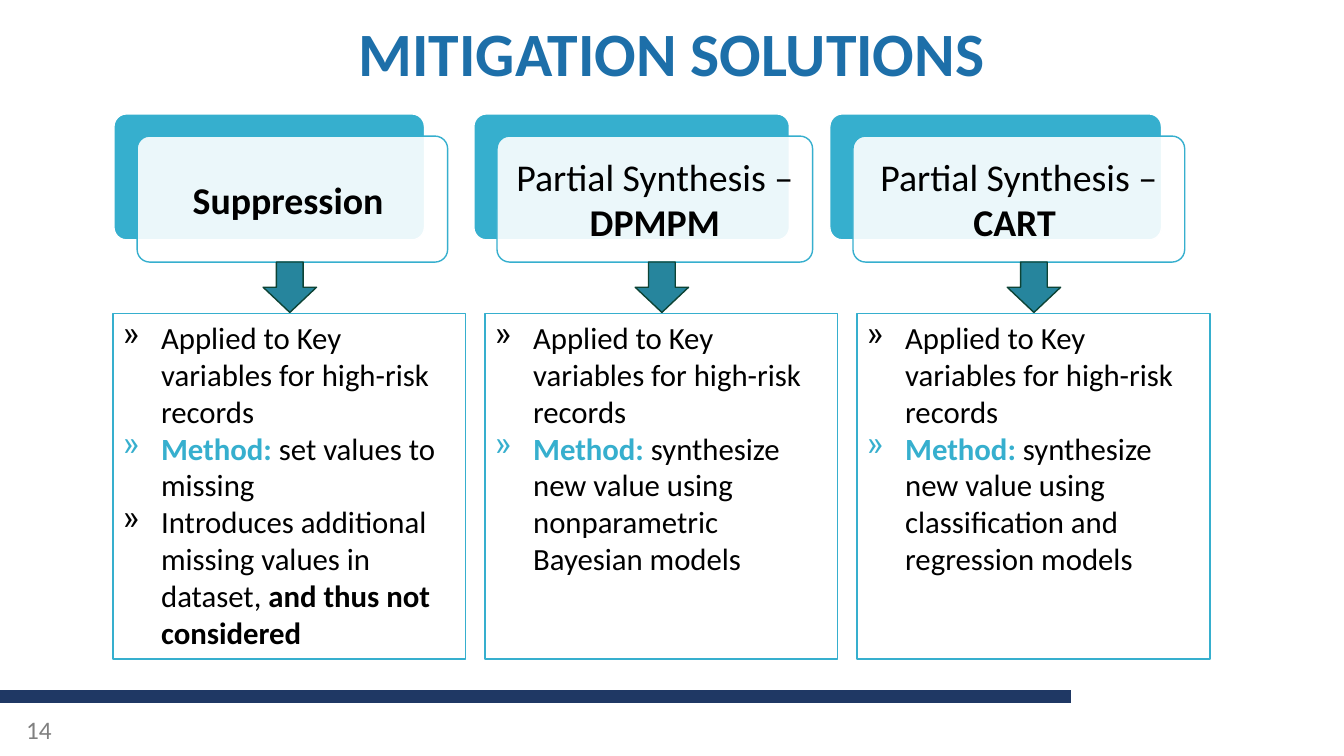
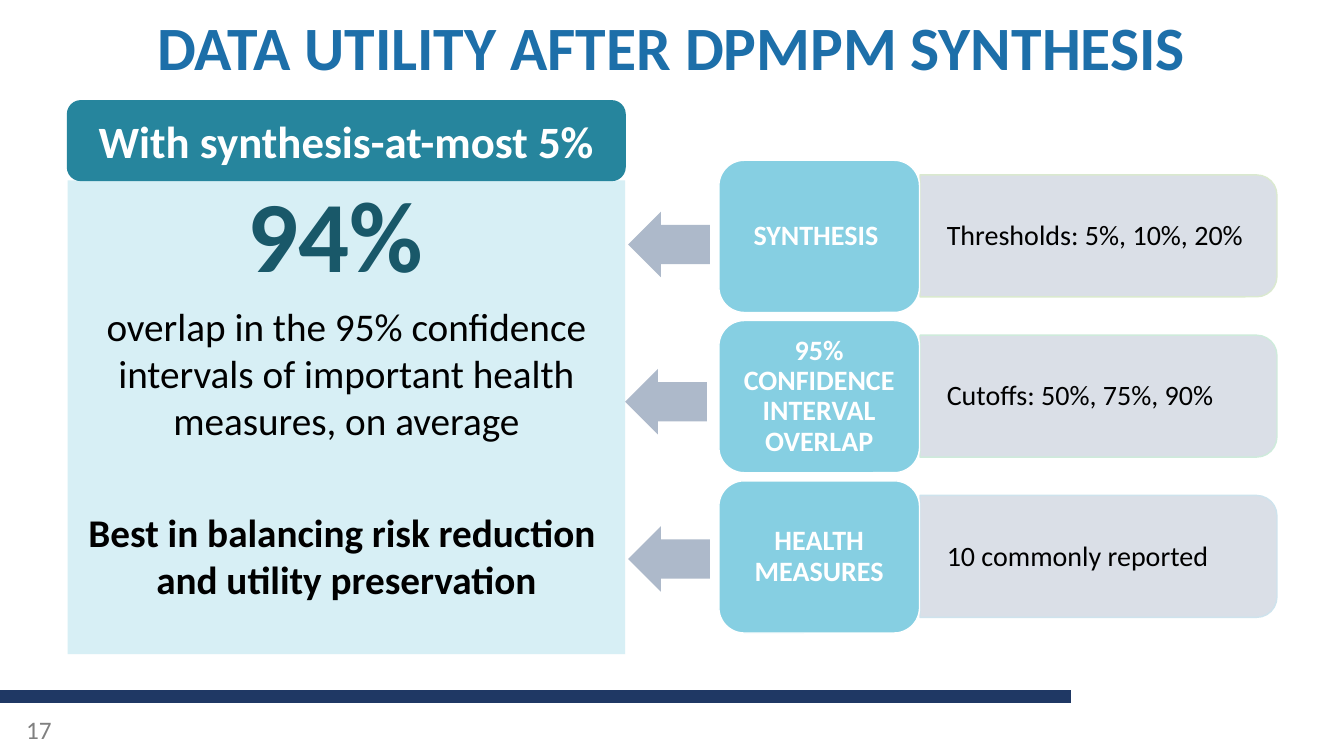
"""Build two slides on mitigation solutions and data utility after synthesis."""
from lxml.etree import SubElement
from pptx import Presentation
from pptx.dml.color import RGBColor
from pptx.enum.shapes import MSO_CONNECTOR, MSO_SHAPE
from pptx.enum.text import MSO_ANCHOR, PP_ALIGN
from pptx.oxml.ns import qn
from pptx.util import Inches, Pt

COLORS = {
    "title": "1D6FA9", "band": "1F3864", "page": "808080",
    "text": "000000", "white": "FFFFFF", "accent": "36AFCE",
    "teal": "26859D", "arrow_edge": "0D4335", "figure": "195869",
    "panel": "D7EFF5", "label": "86CFE2", "detail": "D6DCE5",
    "pointer": "ADB9CA", "edge_green": "DAE9CF", "edge_mint": "CEEBDB",
    "edge_blue": "CEE3ED",
}
FONT = "Calibri"


def rgb(name):
    return RGBColor.from_string(COLORS[name])


def write_text(frame, paragraphs, *, size, color="text", bold=False, align=PP_ALIGN.LEFT,
               anchor=MSO_ANCHOR.TOP, insets=(0.1, 0.05), spacing=None, bullet=None):
    frame.word_wrap = True
    frame.vertical_anchor = anchor
    frame.margin_left = frame.margin_right = Inches(insets[0])
    frame.margin_top = frame.margin_bottom = Inches(insets[1])
    for index, runs in enumerate(paragraphs):
        paragraph = frame.add_paragraph() if index else frame.paragraphs[0]
        paragraph.alignment = align
        if bullet:
            properties = paragraph._p.get_or_add_pPr()
            properties.set("marL", str(Inches(0.38)))
            properties.set("indent", str(-Inches(0.38)))
            SubElement(properties, qn("a:buChar")).set("char", bullet)
        if spacing:
            paragraph.line_spacing = spacing
        for words, changes in runs:
            look = {"size": size, "color": color, "bold": bold, **changes}
            run = paragraph.add_run()
            run.text = words
            run.font.name = FONT
            run.font.size = Pt(look["size"])
            run.font.bold = look["bold"]
            run.font.color.rgb = rgb(look["color"])
    return frame.paragraphs


def plain(words):
    return [(words, {})]


class Deck:
    def __init__(self):
        self.presentation = Presentation()
        self.presentation.slide_width = Inches(13.33)
        self.presentation.slide_height = Inches(7.5)
        self.slide = None

    def start(self, title, page, title_top=0):
        self.slide = self.presentation.slides.add_slide(self.presentation.slide_layouts[6])
        self.band()
        self.text((0, title_top, 13.33, 1), [plain(title)], size=44, color="title", bold=True,
                  align=PP_ALIGN.CENTER, anchor=MSO_ANCHOR.MIDDLE, spacing=0.9)
        self.text((0.16, 7.04, 0.52, 0.4), [plain(page)], size=18, color="page")

    def band(self):
        band = self.slide.shapes.add_connector(
            MSO_CONNECTOR.STRAIGHT, 0, Inches(6.91), Inches(10.62), Inches(6.91))
        band.line.color.rgb = rgb("band")
        band.line.width = Pt(9.75)
        SubElement(band._element.spPr, qn("a:effectLst"))

    def text(self, place, paragraphs, **look):
        box = self.slide.shapes.add_textbox(*map(Inches, place))
        return write_text(box.text_frame, paragraphs, **look)

    def shape(self, kind, place, fill, edge=None, adjust=(), opacity=None, turn=0):
        shape = self.slide.shapes.add_shape(kind, *map(Inches, place))
        shape.shadow.inherit = False
        shape.rotation = turn
        for index, value in enumerate(adjust):
            shape.adjustments[index] = value
        shape.fill.solid()
        shape.fill.fore_color.rgb = rgb(fill)
        if opacity:
            tone = shape._element.spPr.find(qn("a:solidFill"))[0]
            SubElement(tone, qn("a:alpha")).set("val", str(opacity * 1000))
        if edge:
            shape.line.color.rgb = rgb(edge)
            shape.line.width = Pt(1)
        else:
            shape.line.fill.background()
        return shape

    def heading_card(self, left, width, runs):
        rounded = MSO_SHAPE.ROUNDED_RECTANGLE
        self.shape(rounded, (left, 1.13, width, 1.25), "accent", "white", [0.1])
        card = self.shape(rounded, (left + 0.23, 1.35, width, 1.25), "white", "accent", [0.1], 90)
        write_text(card.text_frame, [runs], size=27, align=PP_ALIGN.CENTER,
                   anchor=MSO_ANCHOR.MIDDLE, insets=(0.11, 0.11))

    def bullet_box(self, left, paragraphs):
        box = self.shape(MSO_SHAPE.RECTANGLE, (left, 3.11, 3.5, 3.43), "white", "accent")
        write_text(box.text_frame, paragraphs, size=22, bullet="»")
        self.shape(MSO_SHAPE.DOWN_ARROW, (left + 1.49, 2.6, 0.53, 0.5), "teal", "arrow_edge")

    def labelled_row(self, top, label, detail, edge):
        self.shape(MSO_SHAPE.ROUND_2_SAME_RECTANGLE, (10.29, top - 1.02, 1.21, 3.54),
                   "detail", edge, opacity=90, turn=90)
        self.text((9.12, top + 0.21, 3.48, 1.09), [plain(detail)], size=20,
                  anchor=MSO_ANCHOR.MIDDLE, insets=(0.27, 0.14), spacing=0.9)
        tile = self.shape(MSO_SHAPE.ROUNDED_RECTANGLE, (7.13, top, 1.99, 1.51), "label", "white")
        write_text(tile.text_frame, [plain(label)], size=20, color="white", bold=True,
                   align=PP_ALIGN.CENTER, anchor=MSO_ANCHOR.MIDDLE, insets=(0.08, 0.04),
                   spacing=0.9)


def mitigation_slide(deck):
    deck.start("MITIGATION SOLUTIONS", "14", title_top=0.06)
    strong = {"bold": True}
    partial = ("Partial Synthesis – ", {})
    solutions = [
        (1.13, 3.08, [("Suppression ", strong)], "set values to missing",
         [[("Introduces additional missing values in dataset, ", {}),
           ("and thus not considered", strong)]]),
        (4.7, 3.13, [partial, ("DPMPM", strong)],
         "synthesize new value using nonparametric Bayesian models", []),
        (8.23, 3.29, [partial, ("CART ", strong)],
         "synthesize new value using classification and regression models", []),
    ]
    for column, (left, width, heading, method, remarks) in enumerate(solutions):
        deck.heading_card(left, width, heading)
        deck.bullet_box(1.12 + 3.69 * column, [
            plain("Applied to Key variables for high-risk records"),
            [("Method: ", {"bold": True, "color": "accent"}), (method, {})],
            *remarks,
        ])


def utility_slide(deck):
    deck.start("DATA UTILITY AFTER DPMPM SYNTHESIS", "17")
    panel = deck.shape(MSO_SHAPE.RECTANGLE, (0.67, 1.79, 5.53, 4.7), "panel")
    strong = {"bold": True}
    figure, _, verdict, _ = write_text(panel.text_frame, [
        [("94% ", {"size": 72, "color": "figure", "bold": True})],
        plain("overlap in the 95% confidence intervals of important health measures, on average"),
        [("Best in balancing risk reduction ", strong)],
        [("and utility preservation", strong)],
    ], size=28, align=PP_ALIGN.CENTER)
    figure.line_spacing = 0.9
    figure.space_after = Pt(6)
    verdict.space_before = Pt(46)

    header = deck.shape(MSO_SHAPE.ROUNDED_RECTANGLE, (0.67, 1, 5.53, 0.79), "teal", "teal")
    write_text(header.text_frame, [plain("With synthesis-at-most 5%")], size=32, color="white",
               bold=True, align=PP_ALIGN.CENTER, anchor=MSO_ANCHOR.MIDDLE)

    settings = [
        ("SYNTHESIS ", "Thresholds: 5%, 10%, 20%", "edge_green", 6.23),
        ("95% CONFIDENCE INTERVAL OVERLAP", "Cutoffs: 50%, 75%, 90%", "edge_mint", 6.2),
        ("HEALTH MEASURES", "10 commonly reported", "edge_blue", 6.23),
    ]
    for row, (label, detail, edge, pointer_left) in enumerate(settings):
        deck.labelled_row(1.59 * (row + 1), label, detail, edge)
        deck.shape(MSO_SHAPE.LEFT_ARROW, (pointer_left, 2.1 + 1.56 * row, 0.81, 0.65),
                   "pointer", adjust=[0.6, 0.5])


def main():
    deck = Deck()
    mitigation_slide(deck)
    utility_slide(deck)
    deck.presentation.save("out.pptx")


if __name__ == "__main__":
    main()
